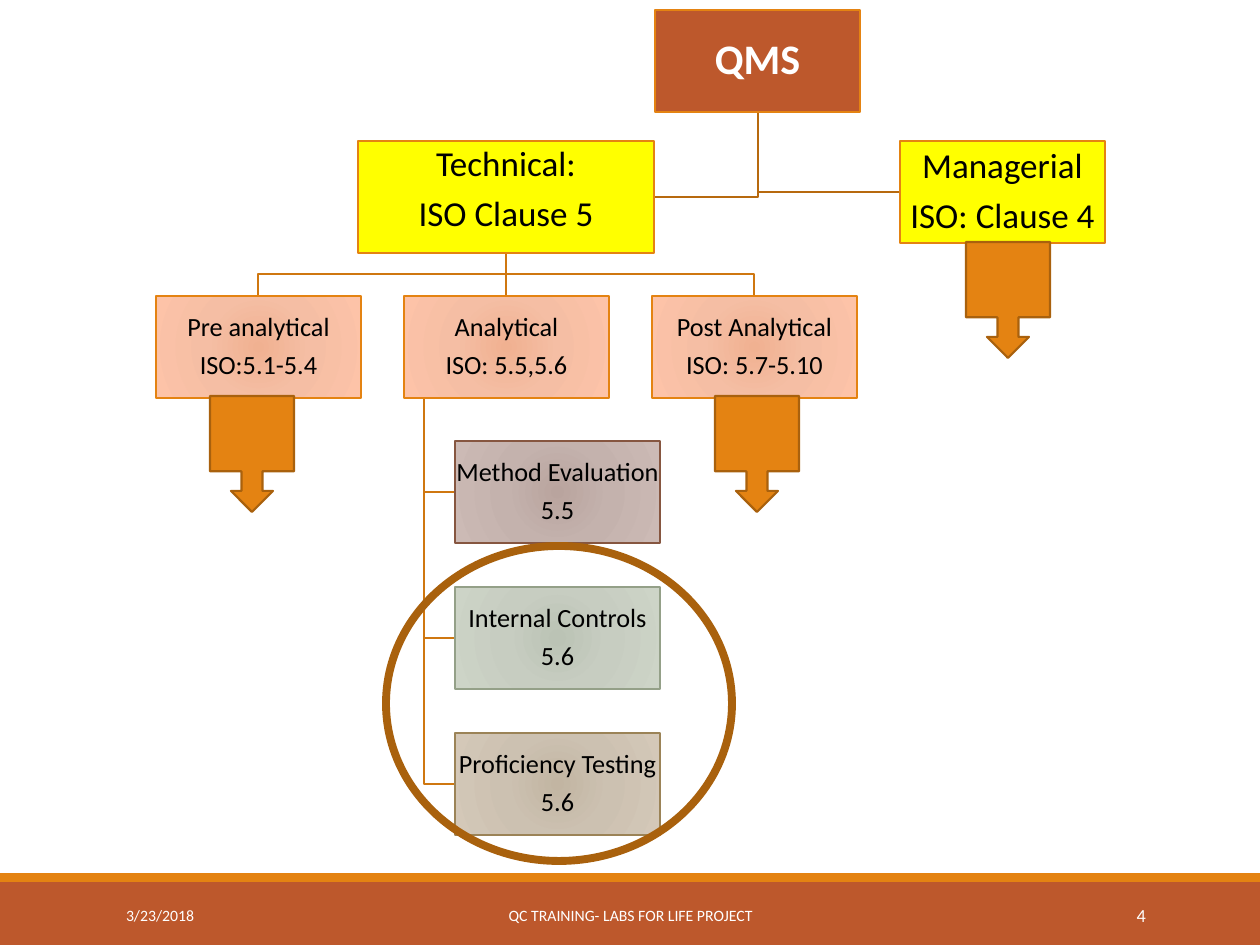
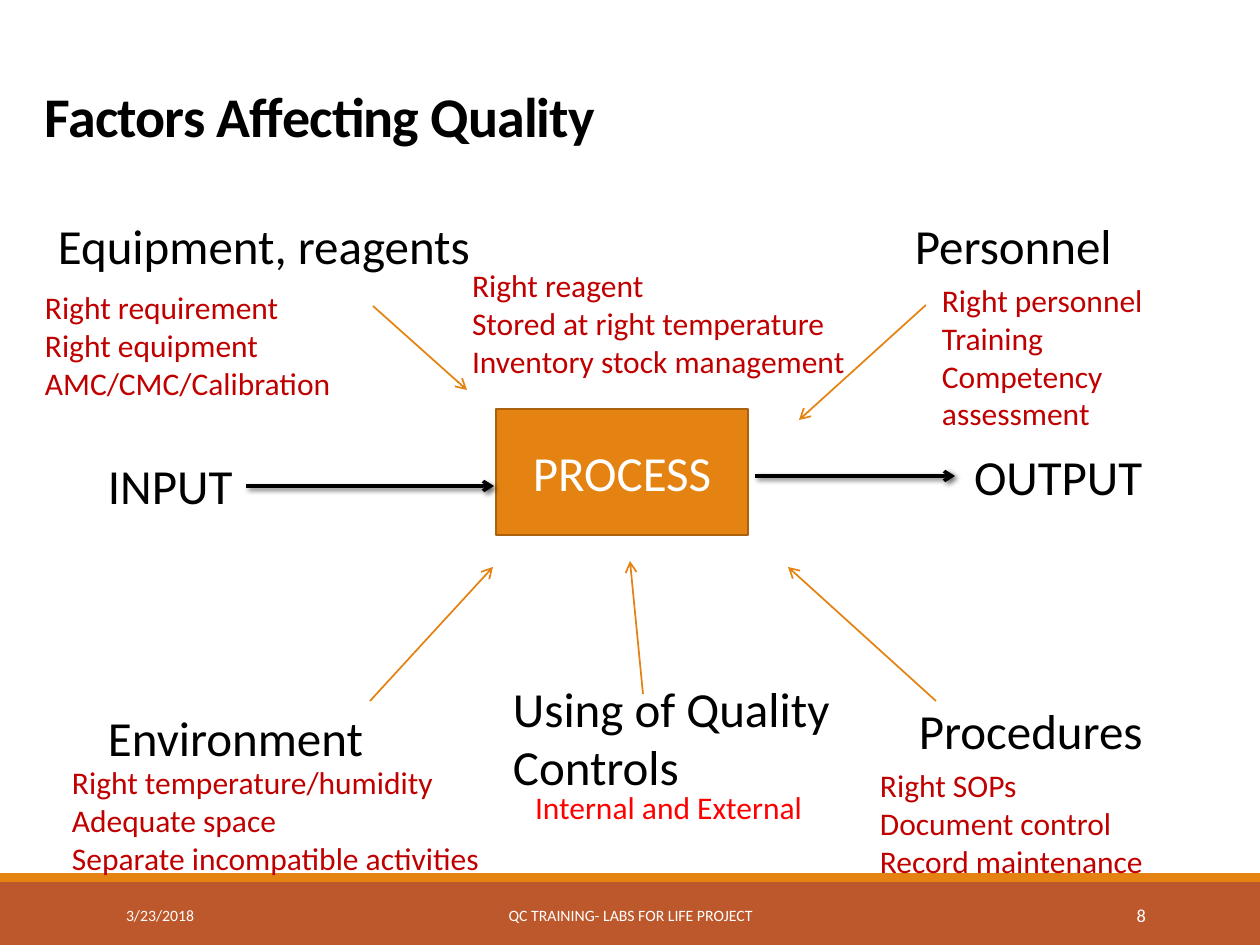
from lxml import etree
from pptx import Presentation
from pptx import util as u
from pptx.dml.color import RGBColor
from pptx.enum import shapes, text
from pptx.oxml import parse_xml
from pptx.oxml.ns import qn

PX = 914400 / 126
NS = 'xmlns:a="http://schemas.openxmlformats.org/drawingml/2006/main"'
FONT = "Calibri"
BLACK, WHITE, YELLOW = "000000", "FFFFFF", "FFFF00"
RUST, ORANGE, BROWN = "BD582C", "E48312", "A9610D"
TRUNK, TWIG = "B7690E", "CF7710"
DARK, RED = "C00000", "FF0000"
PEACH = ("F0B191", "F5BEA4", "FDC3A8")
KIND, ALIGN, ANCHOR = shapes.MSO_SHAPE, text.PP_ALIGN, text.MSO_ANCHOR
EVEN = (13, 6, 13, 6)
LOOSE = (13, 6, 0, 6)
NODE_W, NODE_H = 205, 102


def px(*nums):
    return [u.Emu(round(n * PX)) for n in nums]


def rgb(hue):
    return RGBColor.from_string(hue)


def glow(shape, hues):
    """Fill with a round gradient from the centre out."""
    stops = "".join(
        f'<a:gs pos="{pos}"><a:srgbClr val="{hue}"/></a:gs>'
        for pos, hue in zip((0, 45000, 100000), hues))
    fill = parse_xml(
        f'<a:gradFill {NS} rotWithShape="1"><a:gsLst>{stops}</a:gsLst>'
        '<a:path path="circle"><a:fillToRect l="100000" t="100000" '
        'r="100000" b="100000"/></a:path></a:gradFill>')
    shape._element.spPr.find(qn("a:prstGeom")).addnext(fill)


def block(slide, kind, box, fill=None, edge=None, width=1):
    shape = slide.shapes.add_shape(kind, *px(*box))
    shape.shadow.inherit = False
    if edge:
        shape.line.color.rgb = rgb(edge)
        shape.line.width = u.Pt(width)
    else:
        shape.line.fill.background()
    if isinstance(fill, tuple):
        glow(shape, fill)
    elif fill:
        shape.fill.solid()
        shape.fill.fore_color.rgb = rgb(fill)
    else:
        shape.fill.background()
    return shape


def write(shape, lines, size, hue, align=ALIGN.LEFT, anchor=ANCHOR.TOP,
          ins=EVEN, bold=False, pitch=None, after=0):
    frame = shape.text_frame
    frame.word_wrap = True
    frame.vertical_anchor = anchor
    (frame.margin_left, frame.margin_top,
     frame.margin_right, frame.margin_bottom) = px(*ins)
    for i, line in enumerate(lines):
        para = frame.add_paragraph() if i else frame.paragraphs[0]
        para.text = line
        para.alignment = align
        para.line_spacing = pitch
        para.space_after = u.Pt(after)
        font = para.font
        font.name, font.size, font.bold = FONT, u.Pt(size), bold
        font.color.rgb = rgb(hue)


def label(slide, box, lines, size, hue=BLACK, **style):
    shape = slide.shapes.add_textbox(*px(*box))
    write(shape, lines, size, hue, **style)
    return shape


def node(slide, box, lines, fill, edge=ORANGE, size=15, hue=BLACK,
         bold=False, lift=0):
    """Chart box; lift raises the text by half that many px."""
    shape = block(slide, KIND.RECTANGLE, box, fill, edge)
    write(shape, lines, size, hue, ALIGN.CENTER, ANCHOR.MIDDLE,
          (0, 0, 0, lift), bold, 0.9, round(size * 0.35, 2))


def branch(slide, points, hue):
    """Bent line through the points."""
    start, *rest = [px(*point) for point in points]
    pen = slide.shapes.build_freeform(*start, scale=1.0)
    pen.add_line_segments(rest, close=False)
    shape = pen.convert_to_shape()
    shape.shadow.inherit = False
    shape.fill.background()
    shape.line.color.rgb = rgb(hue)
    shape.line.width = u.Pt(1.25)


def line(slide, ends, hue, width, head=True, shade=False):
    link = slide.shapes.add_connector(
        shapes.MSO_CONNECTOR.STRAIGHT, *px(*ends))
    link.line.color.rgb = rgb(hue)
    link.line.width = u.Pt(width)
    props = link._element.spPr
    if head:
        etree.SubElement(link.line._get_or_add_ln(), qn("a:tailEnd"),
                         type="arrow")
    cast = ('<a:outerShdw blurRad="38100" dist="25400" dir="2700000">'
            '<a:srgbClr val="000000"><a:alpha val="60000"/></a:srgbClr>'
            '</a:outerShdw>') if shade else ""
    props.append(parse_xml(f"<a:effectLst {NS}>{cast}</a:effectLst>"))


def page(deck, number):
    """Blank slide with the bands and the footer."""
    slide = deck.slides.add_slide(deck.slide_layouts[6])
    block(slide, KIND.RECTANGLE, (0, 882, 1260, 63), RUST)
    block(slide, KIND.RECTANGLE, (0, 873, 1260, 9), ORANGE)
    for left, width, words, size, align in (
            (113, 256, "3/23/2018", 9, ALIGN.LEFT),
            (381, 499, "QC TRAINING- LABS FOR LIFE PROJECT", 9, ALIGN.CENTER),
            (1023, 136, str(number), 10.5, ALIGN.RIGHT)):
        label(slide, (left, 890, width, 50), [words], size, WHITE,
              align=align, anchor=ANCHOR.MIDDLE)
    return slide


def chart(deck):
    """Organisation chart of the quality management system."""
    slide = page(deck, 4)
    phases = (("Pre analytical", "ISO:5.1-5.4"),
              ("Analytical", "ISO: 5.5,5.6"),
              ("Post Analytical", "ISO: 5.7-5.10"))
    steps = (("Method Evaluation", "5.5", "865640",
              ("B9A49E", "C4B2AD", "CCBAB5")),
             ("Internal Controls", "5.6", "94A088",
              ("BBC3B5", "C7CDC1", "CDD4C7")),
             ("Proficiency Testing", "5.6", "9B8357",
              ("C2B5A2", "CCC1B1", "D4C8B8")))
    lefts = [156 + 248 * i for i in range(len(phases))]
    tops = [441 + 146 * i for i in range(len(steps))]
    root, mid = 758, 506

    for x, y in ((900, 192), (654, 197)):
        branch(slide, ((root, 113), (root, y), (x, y)), TRUNK)
    for left in (lefts[0], lefts[2]):
        x = left + NODE_W // 2
        branch(slide, ((mid, 253), (mid, 274), (x, 274), (x, 296)), TWIG)
    line(slide, (mid, 253, mid, 296), TWIG, 1.25, head=False)
    for top in tops:
        y = top + NODE_H // 2
        branch(slide, ((424, 398), (424, y), (455, y)), TWIG)

    node(slide, (655, 10, NODE_W, NODE_H), ["QMS"], RUST,
         size=24, hue=WHITE, bold=True)
    node(slide, (358, 141, 296, 112), ["Technical:", "ISO Clause 5"],
         YELLOW, size=20, lift=14)
    node(slide, (900, 141, NODE_W, NODE_H), ["Managerial", "ISO: Clause 4"],
         YELLOW, size=20)
    for left, lines in zip(lefts, phases):
        node(slide, (left, 296, NODE_W, NODE_H), lines, PEACH)
    for top, (name, clause, edge, hues) in zip(tops, steps):
        node(slide, (455, top, NODE_W, NODE_H), (name, clause), hues, edge)

    for x, y in ((210, 396), (715, 396), (966, 242)):
        block(slide, KIND.DOWN_ARROW_CALLOUT, (x, y, 84, 116),
              ORANGE, BROWN, 1.25)
    block(slide, KIND.OVAL, (386, 546, 346, 315), edge=BROWN, width=4.5)


def factors(deck):
    """Process with the factors that act on it."""
    slide = page(deck, 8)
    title = label(slide, (32, 53, 1050, 102), ["Factors Affecting Quality"],
                  32, anchor=ANCHOR.BOTTOM, bold=True, pitch=0.85)
    title.text_frame.paragraphs[0].runs[0]._r.get_or_add_rPr().set(
        "spc", "-50")
    process = block(slide, KIND.RECTANGLE, (496, 409, 252, 126),
                    ORANGE, BROWN, 1.25)
    write(process, ["PROCESS"], 28, WHITE, ALIGN.CENTER, ANCHOR.MIDDLE)

    for ends in ((373, 306, 467, 390), (926, 305, 799, 420),
                 (370, 701, 493, 567), (936, 701, 788, 567),
                 (643, 694, 630, 561)):
        line(slide, ends, ORANGE, 1)
    for ends in ((246, 486, 494, 486), (755, 476, 955, 476)):
        line(slide, ends, BLACK, 2, shade=True)

    for x, y, width, words in (
            (95, 450, 151, "INPUT"), (961, 440, 195, "OUTPUT"),
            (95, 701, 284, "Environment"), (906, 694, 252, "Procedures"),
            (45, 210, 442, "Equipment, reagents"),
            (902, 210, 224, "Personnel")):
        label(slide, (x, y, width, 72), [words], 28, ins=LOOSE)
    label(slide, (500, 672, 372, 131), ["Using of Quality Controls"], 28)

    for x, y, width, lines in (
            (32, 282, 338, ("Right requirement", "Right equipment",
                            "AMC/CMC/Calibration")),
            (459, 260, 411, ("Right reagent", "Stored at right temperature",
                             "Inventory stock management")),
            (929, 275, 300, ("Right personnel", "Training",
                             "Competency assessment")),
            (59, 757, 437, ("Right temperature/humidity", "Adequate space",
                            "Separate incompatible activities")),
            (867, 760, 291, ("Right SOPs", "Document control",
                             "Record maintenance"))):
        label(slide, (x, y, width, 127), lines, 18, DARK, ins=LOOSE)
    label(slide, (522, 782, 407, 50), ["Internal and External"], 18, RED)


def main():
    deck = Presentation()
    deck.slide_width, deck.slide_height = px(1260, 945)
    chart(deck)
    factors(deck)
    deck.save("out.pptx")


if __name__ == "__main__":
    main()
